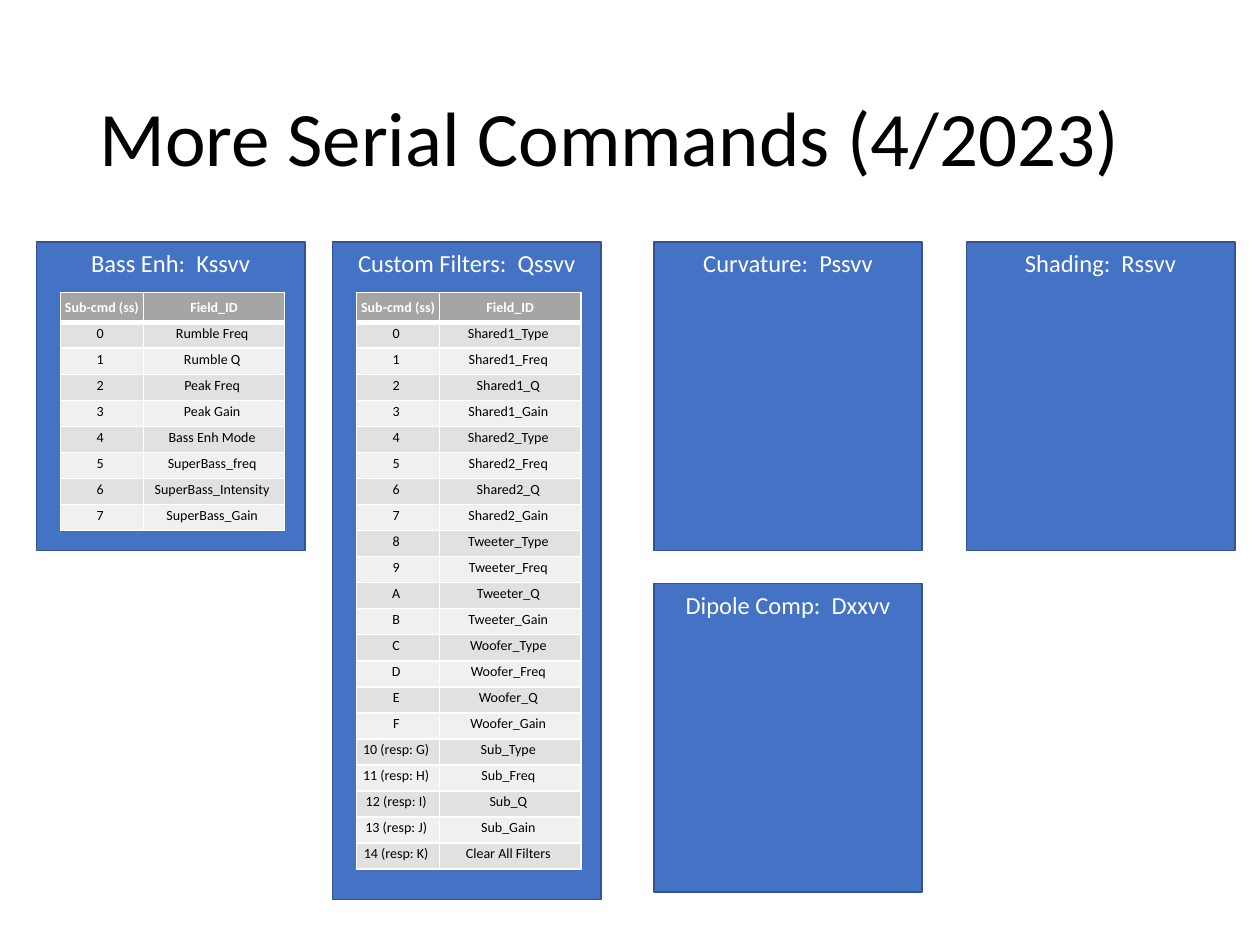
from itertools import product

from lxml.etree import SubElement
from pptx import Presentation
from pptx.dml.color import RGBColor
from pptx.enum.shapes import MSO_SHAPE
from pptx.enum.text import MSO_ANCHOR, MSO_AUTO_SIZE, PP_ALIGN
from pptx.oxml.ns import qn
from pptx.util import Inches, Pt

FONT = "Calibri"
WHITE, BLACK = "FFFFFF", "000000"
PANEL_FILL, PANEL_LINE = "4472C4", "325491"
HEADER_FILL, BAND_FILLS = "A5A5A5", ("E1E1E1", "F0F0F0")

PANEL_WIDTH, PANEL_HEIGHT = 2.13, 2.45
PANEL_TOP = 1.92
TABLE_OFFSET_X, TABLE_OFFSET_Y = 0.19, 0.4
COLUMN_WIDTHS = (0.66, 1.12)
ROW_HEIGHT = 0.2
HEADER_MARGINS = (0.02, 0.05, 0.02, 0.05)
BODY_MARGINS = (0.02, 0.02, 0.05, 0.05)

HEADINGS = ("Sub-cmd (ss)", "Field_ID")
BASS_FIELDS = ["Rumble Freq", "Rumble Q", "Peak Freq", "Peak Gain", "Bass Enh Mode",
               "SuperBass_freq", "SuperBass_Intensity", "SuperBass_Gain"]
FILTER_FIELDS = [f"{band}_{setting}" for band, setting in product(
    ("Shared1", "Shared2", "Tweeter", "Woofer", "Sub"),
    ("Type", "Freq", "Q", "Gain"))] + ["Clear All Filters"]

# Title, left, top, height, table fields
PANELS = [
    ("Bass Enh:  Kssvv", 0.29, PANEL_TOP, PANEL_HEIGHT, BASS_FIELDS),
    ("Custom Filters:  Qssvv", 2.64, PANEL_TOP, 5.22, FILTER_FIELDS),
    ("Curvature:  Pssvv", 5.19, PANEL_TOP, PANEL_HEIGHT, None),
    ("Dipole Comp:  Dxxvv", 5.19, 4.63, PANEL_HEIGHT, None),
    ("Shading:  Rssvv", 7.67, PANEL_TOP, PANEL_HEIGHT, None),
]


def color(value):
    return RGBColor.from_string(value)


def format_text(text_frame, size, text_color, bold=False, alignment=PP_ALIGN.CENTER):
    for paragraph in text_frame.paragraphs:
        paragraph.alignment = alignment
        for run in paragraph.runs:
            run.font.name = FONT
            run.font.size = Pt(size)
            run.font.bold = bold
            run.font.color.rgb = color(text_color)


def set_borders(cell, top=1, bottom=1):
    """Draw white borders, with widths in points."""
    properties = cell._tc.get_or_add_tcPr()
    for side, width in (("L", 1), ("R", 1), ("T", top), ("B", bottom)):
        line = SubElement(properties, qn(f"a:ln{side}"), w=str(Pt(width)))
        fill = SubElement(line, qn("a:solidFill"))
        SubElement(fill, qn("a:srgbClr"), val=WHITE)


def sub_command(number):
    """Give the hex code, with the one-letter response for codes above F."""
    code = f"{number:X}"
    return code if number < 16 else f"{code} (resp: {chr(ord('G') + number - 16)})"


def add_title(slide, text, left, top, width, height):
    title = slide.shapes.title
    title.left, title.top = Inches(left), Inches(top)
    title.width, title.height = Inches(width), Inches(height)
    text_frame = title.text_frame
    text_frame.text = text
    text_frame.auto_size = MSO_AUTO_SIZE.NONE
    text_frame.vertical_anchor = MSO_ANCHOR.MIDDLE
    text_frame.paragraphs[0].line_spacing = 0.9
    format_text(text_frame, 44, BLACK, alignment=PP_ALIGN.LEFT)


def add_command_table(slide, fields, left, top):
    rows = [HEADINGS] + [(sub_command(number), field) for number, field in enumerate(fields)]
    table = slide.shapes.add_table(
        len(rows), len(HEADINGS), Inches(left), Inches(top),
        Inches(sum(COLUMN_WIDTHS)), Inches(ROW_HEIGHT * len(rows))).table
    for column, width in zip(table.columns, COLUMN_WIDTHS):
        column.width = Inches(width)
    for row_index, values in enumerate(rows):
        table.rows[row_index].height = Inches(ROW_HEIGHT)
        is_header = row_index == 0
        margins = HEADER_MARGINS if is_header else BODY_MARGINS
        fill = HEADER_FILL if is_header else BAND_FILLS[(row_index - 1) % 2]
        for column_index, value in enumerate(values):
            cell = table.cell(row_index, column_index)
            cell.text = value
            (cell.margin_left, cell.margin_top,
             cell.margin_right, cell.margin_bottom) = map(Inches, margins)
            set_borders(cell, top=3 if row_index == 1 else 1, bottom=3 if is_header else 1)
            cell.fill.solid()
            cell.fill.fore_color.rgb = color(fill)
            format_text(cell.text_frame, 8, WHITE if is_header else BLACK, bold=is_header)


def add_panel(slide, title, left, top, height, fields):
    panel = slide.shapes.add_shape(
        MSO_SHAPE.RECTANGLE, Inches(left), Inches(top), Inches(PANEL_WIDTH), Inches(height))
    panel.shadow.inherit = False
    panel.fill.solid()
    panel.fill.fore_color.rgb = color(PANEL_FILL)
    panel.line.color.rgb = color(PANEL_LINE)
    panel.line.width = Pt(1)
    panel.text_frame.text = title
    panel.text_frame.word_wrap = True
    panel.text_frame.vertical_anchor = MSO_ANCHOR.TOP
    format_text(panel.text_frame, 14, WHITE)
    if fields:
        add_command_table(slide, fields, left + TABLE_OFFSET_X, top + TABLE_OFFSET_Y)


def main():
    presentation = Presentation()
    presentation.slide_width, presentation.slide_height = Inches(10), Inches(7.5)
    title_only = presentation.slide_layouts[5]
    slide = presentation.slides.add_slide(title_only)
    add_title(slide, "More Serial Commands (4/2023)", 0.69, 0.4, 8.62, 1.45)
    for panel in PANELS:
        add_panel(slide, *panel)
    presentation.save("out.pptx")


if __name__ == "__main__":
    main()
